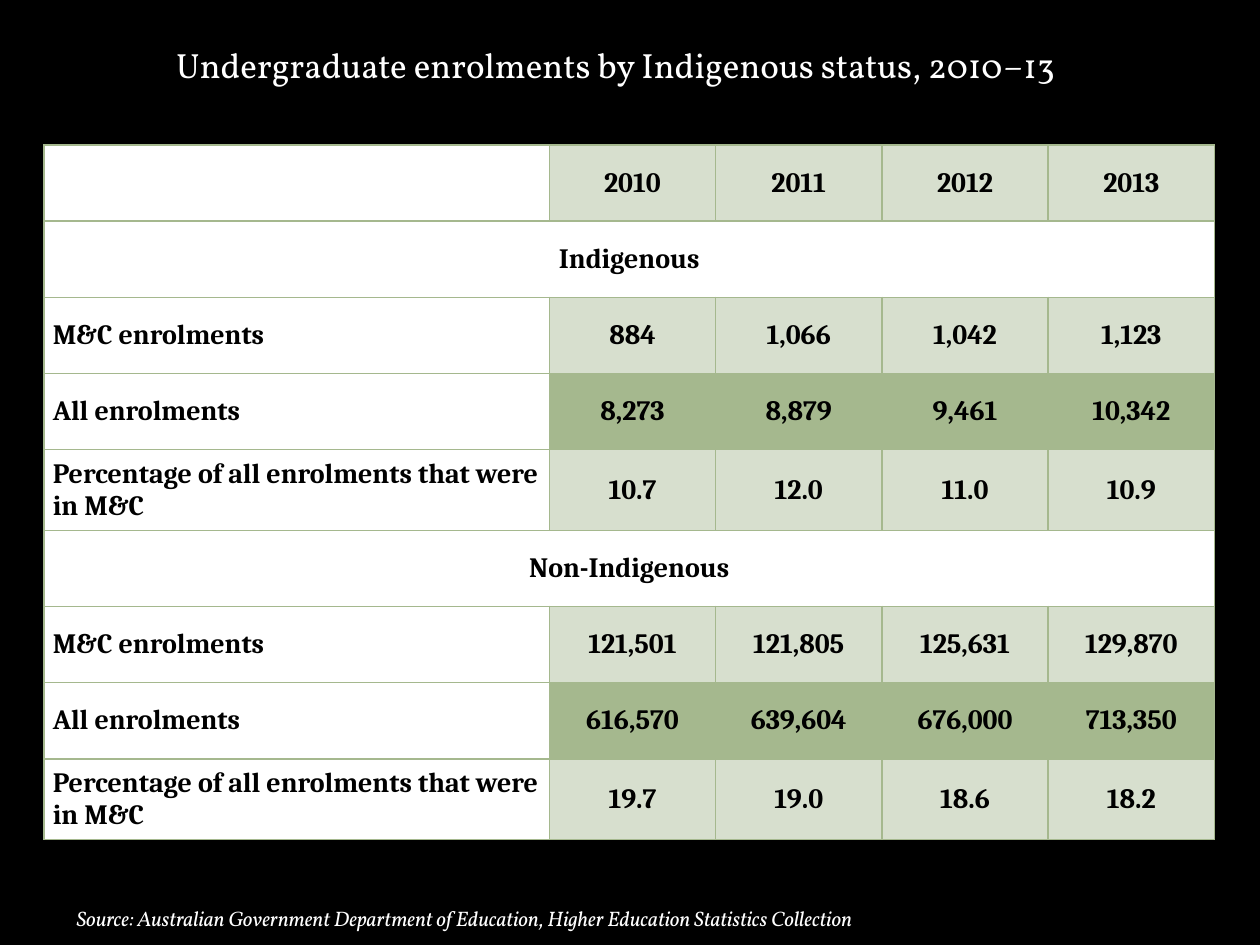
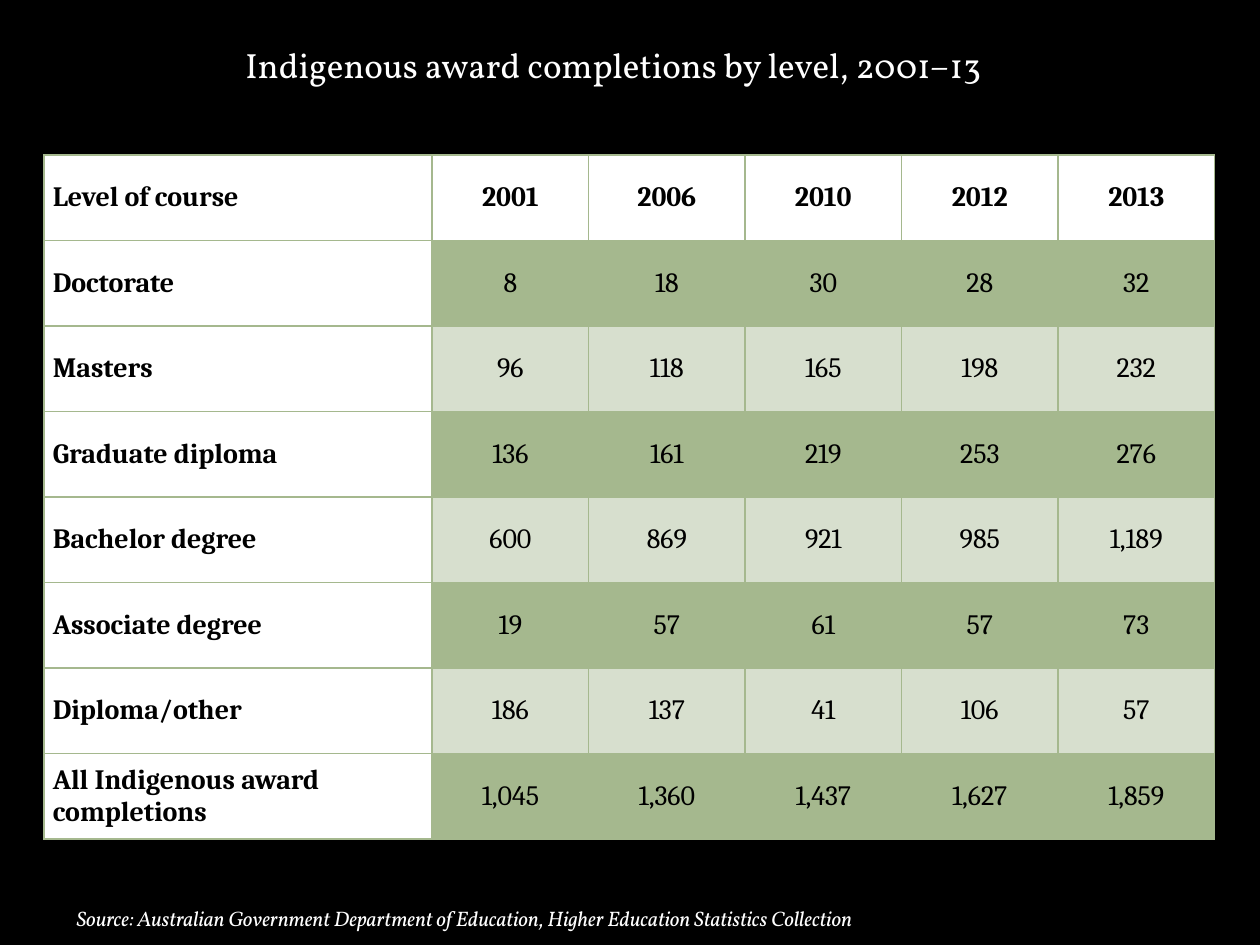
from lxml.etree import SubElement
from pptx import Presentation
from pptx.dml.color import RGBColor
from pptx.enum.text import MSO_ANCHOR, MSO_AUTO_SIZE, PP_ALIGN
from pptx.oxml.ns import qn
from pptx.util import Inches, Pt

COLORS = {
    "background": "000000",
    "on_dark": "FFFFFF",
    "ink": "000000",
    "plain": "FFFFFF",
    "light": "D7DFCE",
    "dark": "A5B88E",
    "border": "A5B88E",
}
SOURCE = (
    "Source: Australian Government Department of Education, "
    "Higher Education Statistics Collection"
)
SHARE = "Percentage of all enrolments that were in M&C"

ENROLMENTS = [
    ("light", "", ["2010", "2011", "2012", "2013"]),
    ("plain", "Indigenous", []),
    ("light", "M&C enrolments", ["884", "1,066", "1,042", "1,123"]),
    ("dark", "All enrolments", ["8,273", "8,879", "9,461", "10,342"]),
    ("light", SHARE, ["10.7", "12.0", "11.0", "10.9"]),
    ("plain", "Non-Indigenous", []),
    ("light", "M&C enrolments", ["121,501", "121,805", "125,631", "129,870"]),
    ("dark", "All enrolments", ["616,570", "639,604", "676,000", "713,350"]),
    ("light", SHARE, ["19.7", "19.0", "18.6", "18.2"]),
]
COMPLETIONS = [
    ("plain", "Level of course", ["2001", "2006", "2010", "2012", "2013"]),
    ("dark", "Doctorate", ["8", "18", "30", "28", "32"]),
    ("light", "Masters", ["96", "118", "165", "198", "232"]),
    ("dark", "Graduate diploma", ["136", "161", "219", "253", "276"]),
    ("light", "Bachelor degree", ["600", "869", "921", "985", "1,189"]),
    ("dark", "Associate degree", ["19", "57", "61", "57", "73"]),
    ("light", "Diploma/other", ["186", "137", "41", "106", "57"]),
    ("dark", "All Indigenous award completions",
     ["1,045", "1,360", "1,437", "1,627", "1,859"]),
]


class Deck:
    """Hold the shared style and current slide on a 100 by 75 grid."""

    columns, rows = 100, 75
    title_font, table_font = "Vollkorn", "Cambria"

    def __init__(self):
        self.prs = Presentation()
        self.prs.slide_width, self.prs.slide_height = Inches(10), Inches(7.5)
        self.s = None

    def x(self, columns):
        return round(self.prs.slide_width * columns / self.columns)

    def y(self, rows):
        return round(self.prs.slide_height * rows / self.rows)

    def color(self, name):
        return RGBColor.from_string(COLORS[name])

    def slide(self, title, title_left):
        self.s = self.prs.slides.add_slide(self.prs.slide_layouts[6])
        fill = self.s.background.fill
        fill.solid()
        fill.fore_color.rgb = self.color("background")
        tf = self.text(title, title_left, -1.1, 90.6, 12.5, 20)
        tf.vertical_anchor = MSO_ANCHOR.MIDDLE
        tf = self.text(SOURCE, 5.1, 71.4, 92.7, 3, 12, italic=True)
        tf.auto_size = MSO_AUTO_SIZE.SHAPE_TO_FIT_TEXT

    def run(self, p, text, size, font, color, bold=False, italic=False):
        r = p.add_run()
        r.text = text
        r.font.size, r.font.name = Pt(size), font
        r.font.bold, r.font.italic = bold, italic
        r.font.color.rgb = self.color(color)

    def text(self, text, left, top, width, height, size, italic=False):
        sp = self.s.shapes.add_textbox(
            self.x(left), self.y(top), self.x(width), self.y(height))
        tf = sp.text_frame
        tf.word_wrap = True
        self.run(tf.paragraphs[0], text, size, self.title_font, "on_dark",
                 italic=italic)
        return tf

    def table(self, data, top, label_width, value_width, row_heights,
              bold_values, space_after):
        count = len(data[0][2]) + 1
        widths = [label_width] + [value_width] * (count - 1)
        table = self.s.shapes.add_table(
            len(data), count, self.x(3.5), self.y(top),
            self.x(sum(widths)), self.y(sum(row_heights))).table
        table.first_row = table.horz_banding = False
        for column, width in zip(table.columns, widths):
            column.width = self.x(width)
        for i, (tone, label, values) in enumerate(data):
            table.rows[i].height = self.y(row_heights[i])
            is_section = not values
            texts = [label] + (values or [""] * (count - 1))
            for j, text in enumerate(texts):
                cell = table.cell(i, j)
                self.cell(cell, tone if j else "plain")
                p = cell.text_frame.paragraphs[0]
                p.space_before = Pt(3 if i else 0)
                p.space_after = Pt(space_after)
                centred = j or is_section
                p.alignment = PP_ALIGN.CENTER if centred else PP_ALIGN.LEFT
                if text:
                    self.run(p, text, 16, self.table_font, "ink",
                             bold=i == 0 or j == 0 or bold_values)
            if is_section:
                table.cell(i, 0).merge(table.cell(i, count - 1))

    def cell(self, cell, tone):
        cell.vertical_anchor = MSO_ANCHOR.MIDDLE
        cell.margin_left = cell.margin_right = self.x(0.7)
        cell.margin_top = cell.margin_bottom = 0
        tcPr = cell._tc.get_or_add_tcPr()
        for side in "LRTB":
            ln = SubElement(tcPr, qn(f"a:ln{side}"), w=str(Pt(1)))
            fill = SubElement(ln, qn("a:solidFill"))
            SubElement(fill, qn("a:srgbClr"), val=COLORS["border"])
        cell.fill.solid()
        cell.fill.fore_color.rgb = self.color(tone)


def main():
    deck = Deck()
    deck.slide("Undergraduate enrolments by Indigenous status, 2010–13", 13)
    heights = [6.4 if label == SHARE else 6.05 for _, label, _ in ENROLMENTS]
    deck.table(ENROLMENTS, 11.5, 40.1, 13.2, heights,
               bold_values=True, space_after=0)

    deck.slide("Indigenous award completions by level, 2001–13", 18.5)
    heights = [54.3 / len(COMPLETIONS)] * len(COMPLETIONS)
    deck.table(COMPLETIONS, 12.3, 30.8, 12.42, heights,
               bold_values=False, space_after=3)
    deck.prs.save("out.pptx")


if __name__ == "__main__":
    main()
